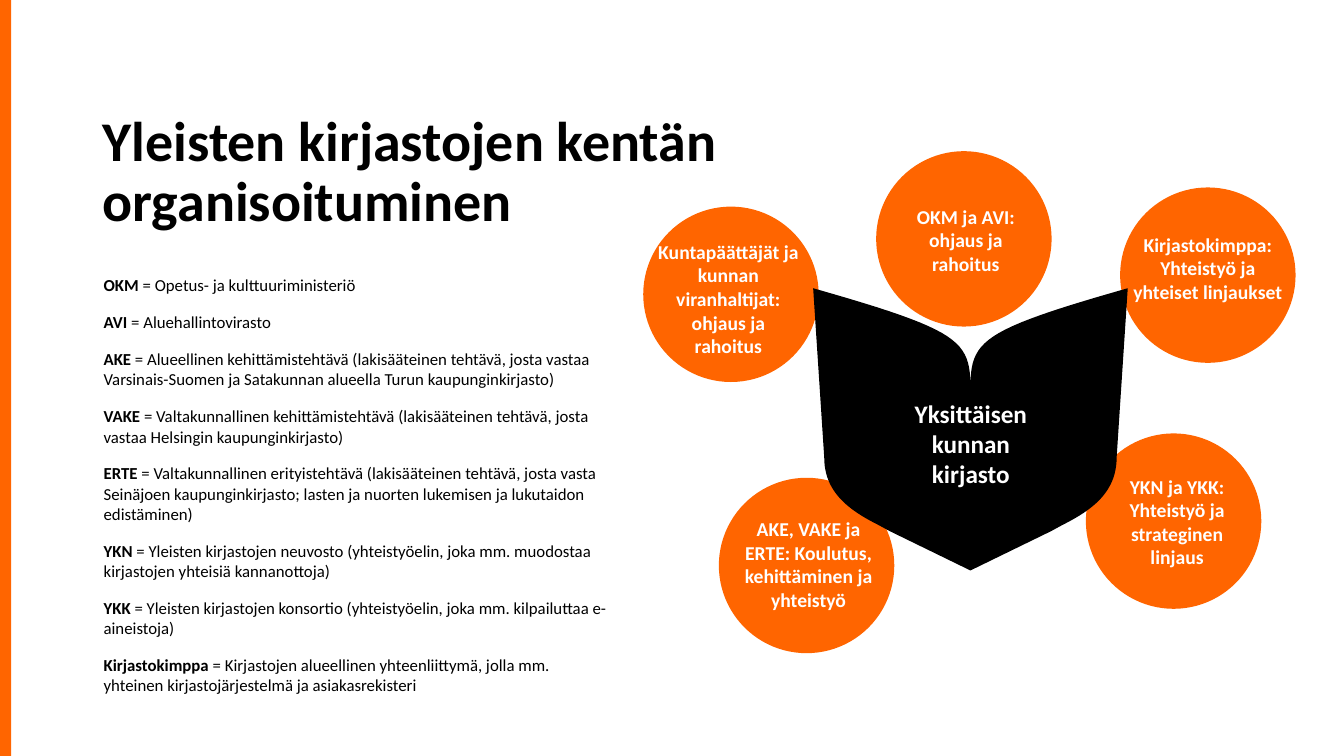
from pptx import Presentation
from pptx.dml.color import RGBColor
from pptx.enum import shapes, text
from pptx.util import Inches, Pt

ORANGE, BLACK, WHITE = "FF6500", "000000", "FFFFFF"
CIRCLE_SIZE = 1.74

TERMS = [
    ("OKM", "Opetus- ja kulttuuriministeriö"),
    ("AVI", "Aluehallintovirasto"),
    ("AKE", "Alueellinen kehittämistehtävä (lakisääteinen tehtävä, josta vastaa "
            "Varsinais-Suomen ja Satakunnan alueella Turun kaupunginkirjasto)"),
    ("VAKE", "Valtakunnallinen kehittämistehtävä (lakisääteinen tehtävä, josta "
             "vastaa Helsingin kaupunginkirjasto)"),
    ("ERTE", "Valtakunnallinen erityistehtävä (lakisääteinen tehtävä, josta vasta "
             "Seinäjoen kaupunginkirjasto; lasten ja nuorten lukemisen ja lukutaidon "
             "edistäminen)"),
    ("YKN", "Yleisten kirjastojen neuvosto (yhteistyöelin, joka mm. muodostaa "
            "kirjastojen yhteisiä kannanottoja)"),
    ("YKK", "Yleisten kirjastojen konsortio (yhteistyöelin, joka mm. kilpailuttaa "
            "e-aineistoja)"),
    ("Kirjastokimppa", "Kirjastojen alueellinen yhteenliittymä, jolla mm. yhteinen "
                       "kirjastojärjestelmä ja asiakasrekisteri"),
]

PARTNERS = [
    ((8.69, 1.5), (8.86, 1.98, 1.44, 0.81), "OKM ja AVI: ohjaus ja rahoitus"),
    ((10.77, 4.3), (10.84, 4.66, 1.67, 1.04),
     "YKN ja YKK: Yhteistyö ja strateginen linjaus"),
    ((7.13, 4.74), (7.17, 5.08, 1.7, 1.04),
     "AKE, VAKE ja ERTE: Koulutus, kehittäminen ja yhteistyö"),
    ((6.38, 2.05), (6.41, 2.33, 1.63, 1.28),
     "Kuntapäättäjät ja kunnan viranhaltijat: ohjaus ja rahoitus"),
    ((11.11, 1.86), (11.11, 2.26, 1.74, 1.04),
     "Kirjastokimppa: Yhteistyö ja yhteiset linjaukset"),
]


def color(value):
    return RGBColor.from_string(value)


def curve(start, pull_start, pull_end, end, steps=24):
    points = []
    for step in range(steps + 1):
        t = step / steps
        weights = ((1 - t) ** 3, 3 * t * (1 - t) ** 2, 3 * t * t * (1 - t), t ** 3)
        points.append(tuple(
            sum(w * p for w, p in zip(weights, axis))
            for axis in zip(start, pull_start, pull_end, end)))
    return points


class SlideBuilder:
    font_name = "Calibri"

    def __init__(self, slide):
        self.slide = slide

    def paint(self, shape, fill):
        shape.shadow.inherit = False
        shape.fill.solid()
        shape.fill.fore_color.rgb = color(fill)
        shape.line.fill.background()

    def shape(self, kind, box, fill):
        self.paint(self.slide.shapes.add_shape(kind, *map(Inches, box)), fill)

    def outline(self, points, fill):
        start, *rest = [(Inches(x), Inches(y)) for x, y in points]
        builder = self.slide.shapes.build_freeform(*start)
        builder.add_line_segments(rest, close=True)
        self.paint(builder.convert_to_shape(), fill)

    def frame(self, box, anchor=text.MSO_ANCHOR.TOP):
        frame = self.slide.shapes.add_textbox(*map(Inches, box)).text_frame
        frame.word_wrap = True
        frame.vertical_anchor = anchor
        return frame

    def style(self, run, size, ink, bold):
        run.font.name = self.font_name
        run.font.size = Pt(size)
        run.font.color.rgb = color(ink)
        run.font.bold = bold

    def label(self, box, words, size):
        paragraph = self.frame(box).paragraphs[0]
        paragraph.text = words
        paragraph.alignment = text.PP_ALIGN.CENTER
        self.style(paragraph.runs[0], size, WHITE, True)

    def title(self, box, words):
        paragraph = self.frame(box, text.MSO_ANCHOR.BOTTOM).paragraphs[0]
        paragraph.text = words
        paragraph.line_spacing = 0.9
        self.style(paragraph.runs[0], 40, BLACK, True)

    def glossary(self, box, terms):
        frame = self.frame(box)
        for index, (term, meaning) in enumerate(terms):
            paragraph = frame.add_paragraph() if index else frame.paragraphs[0]
            if index:
                paragraph.space_before = Pt(12)
            for words, bold in ((term, True), (f" = {meaning}", False)):
                run = paragraph.add_run()
                run.text = words
                self.style(run, 12, BLACK, bold)


def book_outline(spine=9.625):
    right_half = (
        curve((0, 3.86), (0, 3.38), (0.09, 3.28), (1.56, 2.86))
        + curve((1.45, 4.54), (1.45, 4.88), (1.21, 5.06), (0.91, 5.21))
        + [(0.8, 5.27), (0, 5.66)])
    left_half = [(-x, y) for x, y in right_half[-2:0:-1]]
    return [(spine + x, y) for x, y in right_half + left_half]


def main():
    deck = Presentation()
    deck.slide_width, deck.slide_height = Inches(13.33), Inches(7.5)
    page = SlideBuilder(deck.slides.add_slide(deck.slide_layouts[6]))

    page.shape(shapes.MSO_SHAPE.RECTANGLE, (0, 0, 0.11, 7.5), ORANGE)
    for corner, _, _ in PARTNERS:
        page.shape(shapes.MSO_SHAPE.OVAL, (*corner, CIRCLE_SIZE, CIRCLE_SIZE), ORANGE)
    page.outline(book_outline(), BLACK)

    page.title((0.92, 0.9, 6.93, 1.47), "Yleisten kirjastojen kentän organisoituminen")
    page.glossary((0.93, 2.68, 5.2, 4.05), TERMS)
    page.label((8.78, 3.9, 1.7, 1.01), "Yksittäisen kunnan kirjasto", 18)
    for _, box, words in PARTNERS:
        page.label(box, words, 14)

    deck.save("out.pptx")


if __name__ == "__main__":
    main()
